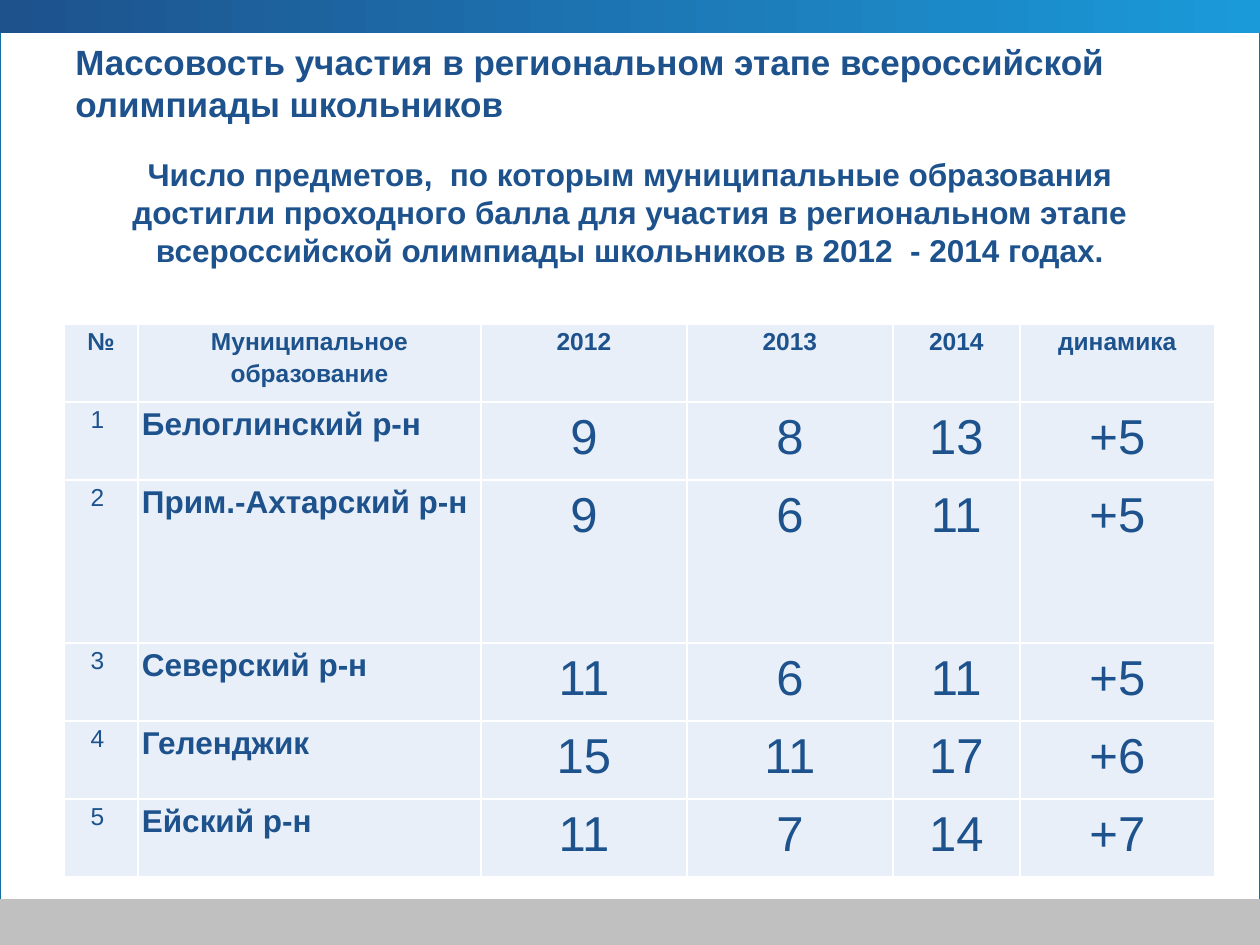
from lxml.etree import SubElement
from pptx import Presentation
from pptx.dml.color import RGBColor
from pptx.enum.shapes import MSO_SHAPE as Shape
from pptx.enum.text import MSO_ANCHOR as Anchor, PP_ALIGN as Align
from pptx.oxml.ns import qn
from pptx.util import Pt

EMU_PER_PX = 914400 / 126
FONT = "Arial"
COLORS = {
    "navy": "1D528D",
    "sky": "1B9AD9",
    "frame": "1472A1",
    "footer": "C0C0C0",
    "cell": "E8EFF8",
    "border": "FFFFFF",
}
TITLE = "Массовость участия в региональном этапе всероссийской олимпиады школьников"
SUBTITLE = (
    "Число предметов,  по которым муниципальные образования достигли проходного балла "
    "для участия в региональном этапе всероссийской олимпиады школьников в 2012  - 2014 годах."
)
HEADERS = ["№", "Муниципальное образование", "2012", "2013", "2014", "динамика"]
RESULTS = [
    ("Белоглинский р-н", 9, 8, 13, "+5"),
    ("Прим.-Ахтарский р-н", 9, 6, 11, "+5"),
    ("Северский р-н", 11, 6, 11, "+5"),
    ("Геленджик", 15, 11, 17, "+6"),
    ("Ейский р-н", 11, 7, 14, "+7"),
]
COLUMN_WIDTHS = [74, 343, 206, 206, 127, 195]
ROW_HEIGHTS = [78, 78, 163, 78, 78, 78]


def px(length):
    return round(length * EMU_PER_PX)


def color(name):
    return RGBColor.from_string(COLORS[name])


def style_paragraph(paragraph, text, size, bold, align):
    paragraph.text = text
    paragraph.alignment = align
    font = paragraph.font
    font.name, font.size, font.bold = FONT, Pt(size), bold
    font.color.rgb = color("navy")


def add_rectangle(slide, box):
    shape = slide.shapes.add_shape(Shape.RECTANGLE, *map(px, box))
    shape.shadow.inherit = False
    shape.line.fill.background()
    return shape


def add_background(slide, box):
    left, top, width, height = box
    frame = add_rectangle(slide, (left, top, width - 1, height))
    frame.fill.background()
    frame.line.color.rgb = color("frame")
    frame.line.width = Pt(0.25)

    footer = add_rectangle(slide, (left, top + height - 46, width, 46))
    footer.fill.solid()
    footer.fill.fore_color.rgb = color("footer")

    header = add_rectangle(slide, (left, top, width, 33))
    header.fill.gradient()
    header.fill.gradient_angle = 0
    for stop, name in zip(header.fill.gradient_stops, ("navy", "sky")):
        stop.color.rgb = color(name)


def add_text(slide, box, text, size, align, anchor):
    text_frame = slide.shapes.add_textbox(*map(px, box)).text_frame
    text_frame.word_wrap = True
    text_frame.vertical_anchor = anchor
    style_paragraph(text_frame.paragraphs[0], text, size, True, align)


def add_borders(cell):
    properties = cell._tc.get_or_add_tcPr()
    for side in ("a:lnL", "a:lnR", "a:lnT", "a:lnB"):
        line = SubElement(properties, qn(side), w=str(Pt(1)))
        fill = SubElement(line, qn("a:solidFill"))
        SubElement(fill, qn("a:srgbClr"), val=COLORS["border"])


def cell_style(row, column):
    if row == 0:
        return 14, True, Align.CENTER
    if column == 0:
        return 14, False, Align.CENTER
    if column == 1:
        return 18, True, Align.LEFT
    return 28, False, Align.CENTER


def add_results_table(slide, box):
    rows = [HEADERS] + [(f"{number} ", *result) for number, result in enumerate(RESULTS, 1)]
    table = slide.shapes.add_table(len(rows), len(HEADERS), *map(px, box)).table
    for column, width in zip(table.columns, COLUMN_WIDTHS):
        column.width = px(width)
    for row, height in zip(table.rows, ROW_HEIGHTS):
        row.height = px(height)
    for row_index, row in enumerate(rows):
        for column_index, value in enumerate(row):
            cell = table.cell(row_index, column_index)
            cell.margin_left = cell.margin_right = px(4)
            cell.margin_top = cell.margin_bottom = 0
            add_borders(cell)
            cell.fill.solid()
            cell.fill.fore_color.rgb = color("cell")
            paragraph = cell.text_frame.paragraphs[0]
            style_paragraph(paragraph, str(value), *cell_style(row_index, column_index))
            paragraph.line_spacing = 1.15


def main():
    presentation = Presentation()
    presentation.slide_width = px(1260)
    presentation.slide_height = px(945)
    slide = presentation.slides.add_slide(presentation.slide_layouts[6])
    add_background(slide, (0, 0, 1260, 945))
    add_text(slide, (63, 44, 1134, 78), TITLE, 20, Align.LEFT, Anchor.MIDDLE)
    add_text(slide, (63, 149, 1134, 723), SUBTITLE, 18, Align.CENTER, Anchor.TOP)
    add_results_table(slide, (64, 324, sum(COLUMN_WIDTHS), sum(ROW_HEIGHTS)))
    presentation.save("out.pptx")


if __name__ == "__main__":
    main()
